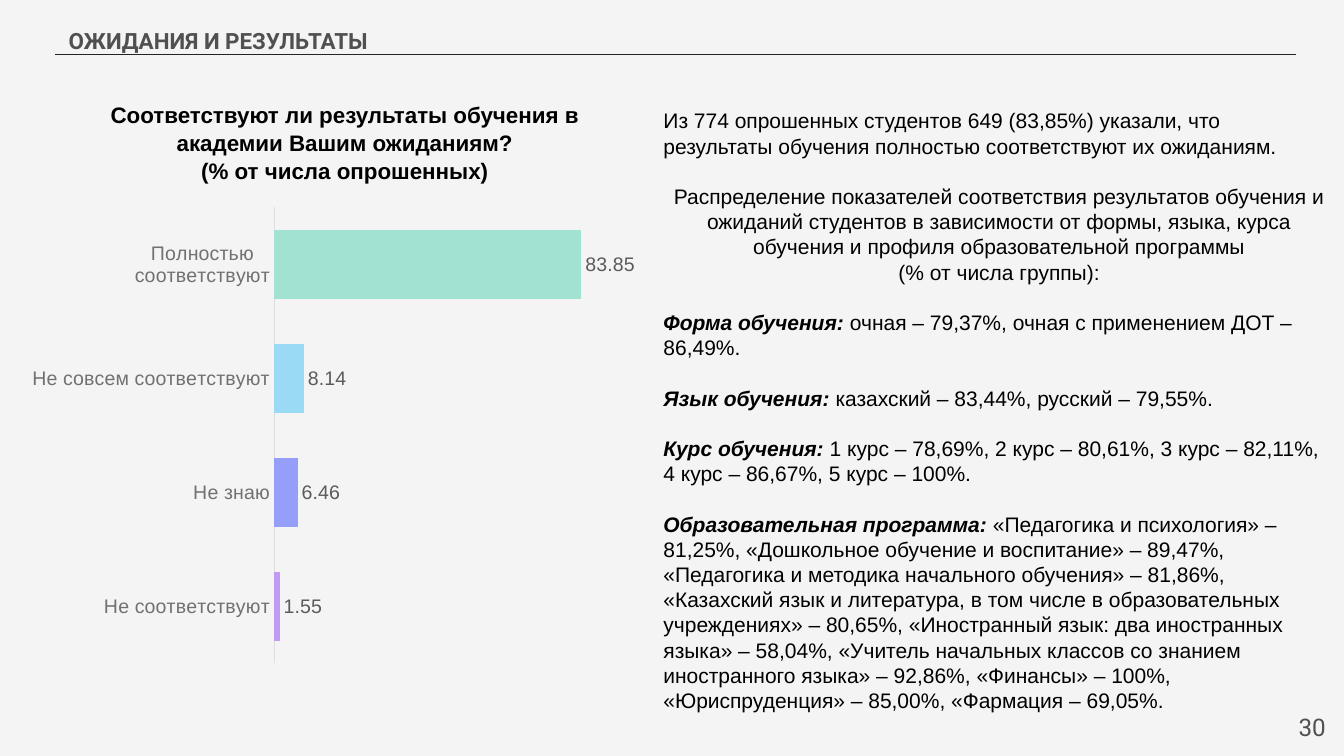
"""Builds the survey slide on student expectations and results."""
from lxml import etree
from pptx import Presentation
from pptx import util as u
from pptx.chart import data as chart_data
from pptx.dml.color import RGBColor
from pptx.enum import chart as ch, shapes, text
from pptx.oxml import ns

COLORS = {"back": "F4F4F4", "rule": "242424", "heading": "505050", "body": "000000",
          "axis": "DEDEDE", "category": "717171", "value": "5B5B5B"}
HEADING = "ОЖИДАНИЯ И РЕЗУЛЬТАТЫ"
PAGE_NUMBER = "30"
QUESTION = ["Соответствуют ли результаты обучения в академии Вашим ожиданиям?",
            "(% от числа опрошенных)"]
ANSWERS = [
    ("Не соответствуют", 1.55, "C29AF4"),
    ("Не знаю", 6.46, "959FFA"),
    ("Не совсем соответствуют", 8.14, "9ADAF4"),
    ("Полностью соответствуют", 83.85, "A1E2D3"),
]
PLOT = {"x": 0.4, "y": 0.025, "w": 0.55, "h": 0.967}
LEFT, CENTER, RIGHT = text.PP_ALIGN.LEFT, text.PP_ALIGN.CENTER, text.PP_ALIGN.RIGHT
LINE = 18
FINDINGS = [
    ("", "Из 774 опрошенных студентов 649 (83,85%) указали, что результаты обучения "
     "полностью соответствуют их ожиданиям.", LEFT, 0),
    ("", "Распределение показателей соответствия результатов обучения и ожиданий студентов "
     "в зависимости от формы, языка, курса обучения и профиля образовательной программы",
     CENTER, LINE),
    ("", "(% от числа группы):", CENTER, 0),
    ("Форма обучения: ", "очная – 79,37%, очная с применением ДОТ – 86,49%.", LEFT, LINE),
    ("Язык обучения: ", "казахский – 83,44%, русский – 79,55%.", LEFT, LINE),
    ("Курс обучения: ", "1 курс – 78,69%, 2 курс – 80,61%, 3 курс – 82,11%, "
     "4 курс – 86,67%, 5 курс – 100%.", LEFT, LINE),
    ("Образовательная программа: ", "«Педагогика и психология» – 81,25%, "
     "«Дошкольное обучение и воспитание» – 89,47%, "
     "«Педагогика и методика начального обучения» – 81,86%, "
     "«Казахский язык и литература, в том числе в образовательных учреждениях» – 80,65%, "
     "«Иностранный язык: два иностранных языка» – 58,04%, "
     "«Учитель начальных классов со знанием иностранного языка» – 92,86%, "
     "«Финансы» – 100%, «Юриспруденция» – 85,00%, «Фармация – 69,05%.", LEFT, LINE),
]


def color(name):
    return RGBColor.from_string(COLORS[name])


def set_font(font, size, name, tint, bold=False):
    font.size, font.name, font.bold = u.Pt(size), name, bold
    font.color.rgb = color(tint)


def place(box, left, top, width, height):
    box.left, box.top = u.Inches(left), u.Inches(top)
    box.width, box.height = u.Inches(width), u.Inches(height)


def set_frame(frame, anchor, inset, left_inset=None):
    frame.word_wrap = True
    frame.auto_size = text.MSO_AUTO_SIZE.NONE
    frame.vertical_anchor = anchor
    frame.margin_top = frame.margin_right = frame.margin_bottom = u.Inches(inset)
    frame.margin_left = u.Inches(inset if left_inset is None else left_inset)


def add_label(page, bounds, lines, size, name, tint, align, bold=False):
    box = page.shapes.add_textbox(*map(u.Inches, bounds))
    set_frame(box.text_frame, text.MSO_ANCHOR.TOP, 0.13)
    box.text_frame.text = "\n".join(lines)
    for para in box.text_frame.paragraphs:
        para.alignment = align
        para.line_spacing = 1.03
        set_font(para.font, size, name, tint, bold)


def add_heading(page):
    title = page.shapes.title
    place(title, 0.37, 0.13, 5, 0.54)
    set_frame(title.text_frame, text.MSO_ANCHOR.MIDDLE, 0.13, 0.31)
    title.text_frame.text = HEADING
    para = title.text_frame.paragraphs[0]
    para.alignment = LEFT
    set_font(para.font, 16, "Roboto", "heading", True)
    rule = page.shapes.add_connector(shapes.MSO_CONNECTOR.STRAIGHT,
                                     *map(u.Inches, (0.55, 0.54, 12.85, 0.54)))
    rule.line.color.rgb = color("rule")
    rule.line.width = u.Pt(0.75)
    etree.SubElement(rule._element.spPr, ns.qn("a:effectLst"))


def add_findings(page):
    body = page.placeholders[1]
    place(body, 6.48, 1.02, 6.86, 6.15)
    frame = body.text_frame
    set_frame(frame, text.MSO_ANCHOR.TOP, 0.05, 0.1)
    frame.margin_right = u.Inches(0.1)
    for index, (lead, detail, align, gap) in enumerate(FINDINGS):
        para = frame.add_paragraph() if index else frame.paragraphs[0]
        para.alignment = align
        para.line_spacing, para.space_before = u.Pt(LINE), u.Pt(gap)
        set_font(para.font, 15, "Arial", "body")
        properties = para._p.get_or_add_pPr()
        properties.set("marL", "0")
        properties.set("indent", "0")
        properties.insert_element_before(
            etree.Element(ns.qn("a:buNone")), "a:tabLst", "a:defRPr", "a:extLst")
        if lead:
            span = para.add_run()
            span.text = lead
            span.font.bold = span.font.italic = True
        para.add_run().text = detail


def add_answers_chart(page):
    names, values, tints = zip(*ANSWERS)
    data = chart_data.CategoryChartData()
    data.categories = names
    data.add_series("Series 1", values)
    chart = page.shapes.add_chart(ch.XL_CHART_TYPE.BAR_CLUSTERED,
                                  *map(u.Inches, (0.32, 1.94, 5.98, 4.68)), data).chart
    chart.has_legend = chart.has_title = False
    set_font(chart.font, 10, "Arial", "rule")

    axis = chart.category_axis
    axis.major_tick_mark = ch.XL_TICK_MARK.NONE
    axis.format.line.color.rgb = color("axis")
    axis.format.line.width = u.Pt(0.75)
    set_font(axis.tick_labels.font, 14, "Arial", "category")
    scale = chart.value_axis
    scale.visible = scale.has_major_gridlines = False
    scale.minimum_scale, scale.maximum_scale = 0, 90

    plot = chart.plots[0]
    plot.gap_width, plot.vary_by_categories = 66, False
    plot.has_data_labels = True
    plot.data_labels.show_value = True
    plot.data_labels.position = ch.XL_LABEL_POSITION.OUTSIDE_END
    set_font(plot.data_labels.font, 14, "Arial", "value")
    for index, tint in enumerate(tints):
        fill = plot.series[0].points[index].format.fill
        fill.solid()
        fill.fore_color.rgb = RGBColor.from_string(tint)

    area = chart._chartSpace.chart.plotArea
    for old in area.findall(ns.qn("c:layout")):
        area.remove(old)
    layout = etree.Element(ns.qn("c:layout"))
    manual = etree.SubElement(layout, ns.qn("c:manualLayout"))
    settings = {"layoutTarget": "inner", "xMode": "edge", "yMode": "edge", **PLOT}
    for tag, value in settings.items():
        etree.SubElement(manual, ns.qn("c:" + tag)).set("val", str(value))
    area.insert(0, layout)


def main():
    deck = Presentation()
    deck.slide_width, deck.slide_height = u.Inches(13.33), u.Inches(7.5)
    page = deck.slides.add_slide(deck.slide_layouts[1])
    page.background.fill.solid()
    page.background.fill.fore_color.rgb = color("back")
    add_heading(page)
    add_label(page, (0.54, 0.87, 5.76, 1.08), QUESTION, 16, "Arial", "body", CENTER, True)
    add_answers_chart(page)
    add_findings(page)
    add_label(page, (12.48, 6.93, 0.8, 0.57), [PAGE_NUMBER], 17.3, "Roboto", "heading", RIGHT)
    deck.save("out.pptx")


if __name__ == "__main__":
    main()
